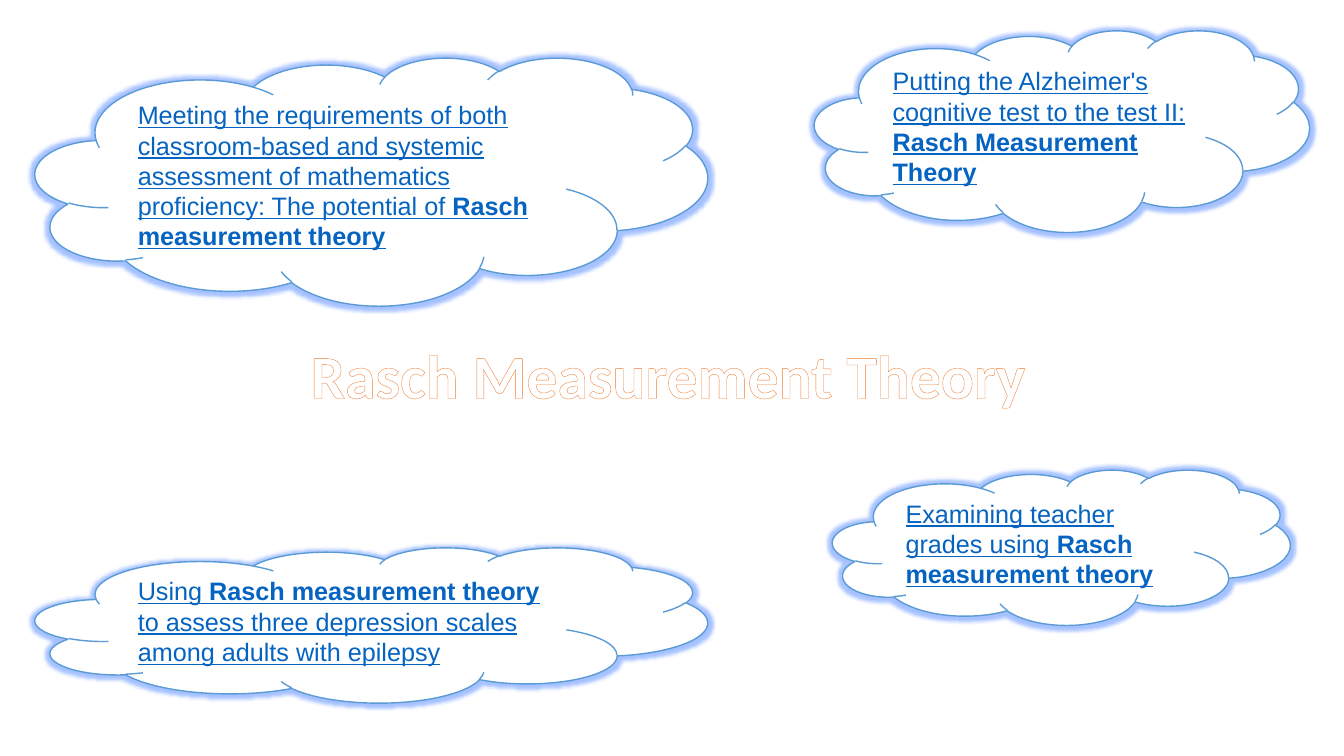
from lxml import etree
from pptx import Presentation
from pptx.dml.color import RGBColor
from pptx.enum import shapes, text
from pptx.oxml import ns
from pptx.util import Pt

WHITE = RGBColor(0xFF, 0xFF, 0xFF)
BLUE = RGBColor(0x5B, 0x9B, 0xD5)
LINK_BLUE = RGBColor(0x05, 0x63, 0xC1)
GLOW_BLUE = RGBColor(0x1F, 0x66, 0xFF)
ORANGE = RGBColor(0xED, 0x7D, 0x31)

TITLE_FONT = {"name": "Calibri", "size": Pt(44), "bold": True}
CLOUD_FONT = {"name": "Arial", "size": Pt(18), "underline": True}

# Left, top, width, height in points, then (wording, bold) pairs
CLOUDS = [
    ((594.7, 335.5, 326.9, 110.9), [
        ("Examining teacher grades using ", False),
        ("Rasch measurement theory", True)]),
    ((581.8, 21.6, 353.5, 144), [
        ("Putting the Alzheimer's cognitive test to the test II: ", False),
        ("Rasch Measurement Theory", True)]),
    ((25.2, 391, 480.2, 110.9), [
        ("Using ", False),
        ("Rasch measurement theory ", True),
        ("to assess three depression scales among adults with epilepsy", False)]),
    ((25.2, 41, 480.2, 177.1), [
        ("Meeting the requirements of both classroom-based and systemic "
         "assessment of mathematics proficiency: The potential of ", False),
        ("Rasch measurement theory", True)]),
]


def set_all(target, values):
    for name, value in values.items():
        setattr(target, name, value)


def add_span(para, wording, font, color):
    span = para.add_run()
    span.text = wording
    set_all(span.font, font)
    span.font.color.rgb = color
    return span


def add_color(parent, color):
    fill = etree.SubElement(parent, ns.qn("a:solidFill"))
    etree.SubElement(fill, ns.qn("a:srgbClr"), val=str(color))


def outline_text(span, color, width):
    line = etree.Element(ns.qn("a:ln"), w=str(int(width)))
    add_color(line, color)
    span.font._element.insert(0, line)


def add_glow(shape, color, radius, opacity):
    effects = shape._element.spPr.find(ns.qn("a:effectLst"))
    glow = etree.SubElement(effects, ns.qn("a:glow"), rad=str(int(radius)))
    tint = etree.SubElement(glow, ns.qn("a:srgbClr"), val=str(color))
    etree.SubElement(tint, ns.qn("a:alpha"), val=str(opacity * 1000))


def add_title(page, wording):
    title = page.shapes.title
    set_all(title, {"left": Pt(214.6), "top": Pt(218.2),
                    "width": Pt(530.6), "height": Pt(104.4)})
    set_all(title.text_frame, {"vertical_anchor": text.MSO_ANCHOR.MIDDLE,
                               "word_wrap": True,
                               "auto_size": text.MSO_AUTO_SIZE.NONE})
    para = title.text_frame.paragraphs[0]
    set_all(para, {"alignment": text.PP_ALIGN.LEFT, "line_spacing": 0.9})
    span = add_span(para, wording, TITLE_FONT, WHITE)
    outline_text(span, ORANGE, Pt(0.52))


def add_cloud(page, place, spans):
    cloud = page.shapes.add_shape(shapes.MSO_SHAPE.CLOUD, *map(Pt, place))
    cloud.shadow.inherit = False
    cloud.fill.solid()
    cloud.fill.fore_color.rgb = WHITE
    cloud.line.color.rgb = BLUE
    cloud.line.width = Pt(1)
    add_glow(cloud, GLOW_BLUE, Pt(5), 40)
    set_all(cloud.text_frame, {"vertical_anchor": text.MSO_ANCHOR.TOP,
                               "word_wrap": True,
                               "auto_size": text.MSO_AUTO_SIZE.SHAPE_TO_FIT_TEXT})
    para = cloud.text_frame.paragraphs[0]
    para.alignment = text.PP_ALIGN.LEFT
    for wording, bold in spans:
        add_span(para, wording, {**CLOUD_FONT, "bold": bold}, LINK_BLUE)


def main():
    deck = Presentation()
    set_all(deck, {"slide_width": Pt(960), "slide_height": Pt(540)})
    page = deck.slides.add_slide(deck.slide_layouts.get_by_name("Title Only"))
    add_title(page, "Rasch Measurement Theory")
    for place, spans in CLOUDS:
        add_cloud(page, place, spans)
    deck.save("out.pptx")


if __name__ == "__main__":
    main()
